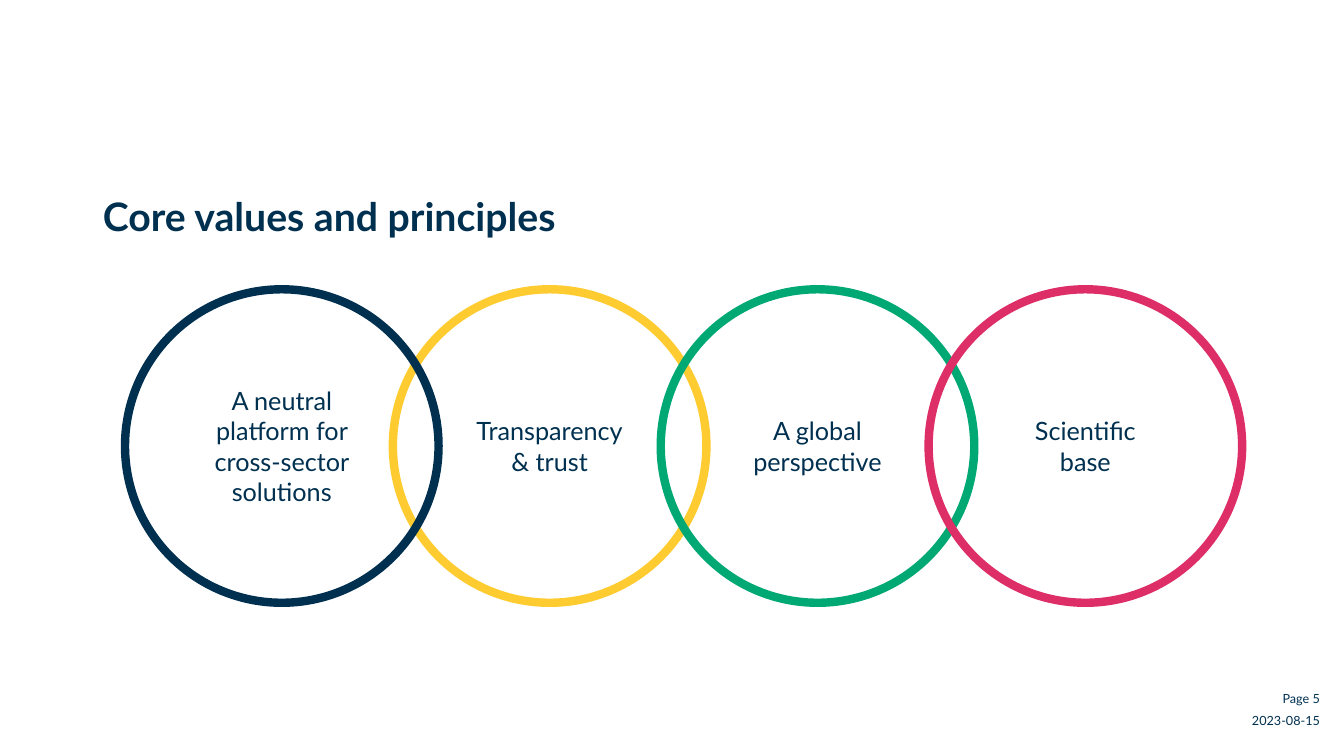
import pptx
import pptx.dml.color
import pptx.enum.shapes
import pptx.enum.text
import pptx.util

NAVY = "003050"
YELLOW = "FECC30"
GREEN = "00A874"
PINK = "DD2E68"
WHITE = "FFFFFF"
ALIGN = pptx.enum.text.PP_ALIGN
ANCHOR = pptx.enum.text.MSO_ANCHOR
SHAPE = pptx.enum.shapes.MSO_SHAPE


def color(value):
    return pptx.dml.color.RGBColor.from_string(value)


def assign(target, values):
    for name, value in values.items():
        setattr(target, name, value)


class SlideBuilder:
    """Build one slide in a shared style, with lengths in percent of its size."""

    def __init__(self, presentation):
        self.width = presentation.slide_width
        self.height = presentation.slide_height
        self.slide = presentation.slides.add_slide(presentation.slide_layouts[6])
        self.font = {"name": "Lato", "bold": False}

    def place(self, left, top, width, height):
        return (
            round(left * self.width / 100),
            round(top * self.height / 100),
            round(width * self.width / 100),
            round(height * self.height / 100),
        )

    def fill_text(self, shape, lines, margins, anchor, paragraph_format, font):
        frame = shape.text_frame
        frame.text = "\n".join(lines)
        assign(frame, {"word_wrap": True, "vertical_anchor": anchor})
        for side, inches in zip(("left", "top", "right", "bottom"), margins):
            assign(frame, {f"margin_{side}": pptx.util.Inches(inches)})
        for paragraph in frame.paragraphs:
            assign(paragraph, paragraph_format)
            assign(paragraph.font, self.font | font)
            paragraph.font.color.rgb = color(NAVY)

    def title(self, text, box):
        shape = self.slide.shapes.add_textbox(*self.place(*box))
        shape.fill.solid()
        shape.fill.fore_color.rgb = color(WHITE)
        self.fill_text(shape, [text], (0.37, 0.05, 0.1, 0.05), ANCHOR.BOTTOM,
                       {"alignment": ALIGN.LEFT, "line_spacing": 0.9},
                       {"size": pptx.util.Pt(28), "bold": True})

    def footer(self, text, box):
        shape = self.slide.shapes.add_textbox(*self.place(*box))
        self.fill_text(shape, [text], (0.1, 0.05, 0.1, 0.05), ANCHOR.MIDDLE,
                       {"alignment": ALIGN.RIGHT}, {"size": pptx.util.Pt(9)})

    def ring(self, lines, line_color, box):
        shape = self.slide.shapes.add_shape(SHAPE.OVAL, *self.place(*box))
        shape.shadow.inherit = False
        shape.fill.background()
        shape.line.color.rgb = color(line_color)
        shape.line.width = pptx.util.Pt(6)
        self.fill_text(shape, lines, (0.13,) * 4, ANCHOR.MIDDLE,
                       {"alignment": ALIGN.CENTER}, {"size": pptx.util.Pt(18)})


def main():
    presentation = pptx.Presentation()
    presentation.slide_width = pptx.util.Inches(13.33)
    presentation.slide_height = pptx.util.Inches(7.5)
    builder = SlideBuilder(presentation)

    builder.title("Core values and principles", (4.88, 21.47, 42.38, 10.93))
    for text, top in (("2023-08-15", 92.67), ("Page 5", 89.73)):
        builder.footer(text, (76.44, top, 22.5, 5.33))

    first_left, pitch = 9.3, 19.93
    values = (
        (1, YELLOW, ["Transparency", "& trust"]),
        (0, NAVY, ["A neutral platform for cross-sector solutions"]),
        (2, GREEN, ["A global perspective"]),
        (3, PINK, ["Scientific", "base"]),
    )
    for column, line_color, lines in values:
        left = first_left + column * pitch
        builder.ring(lines, line_color, (left, 38.27, 23.33, 41.47))

    presentation.save("out.pptx")


if __name__ == "__main__":
    main()
